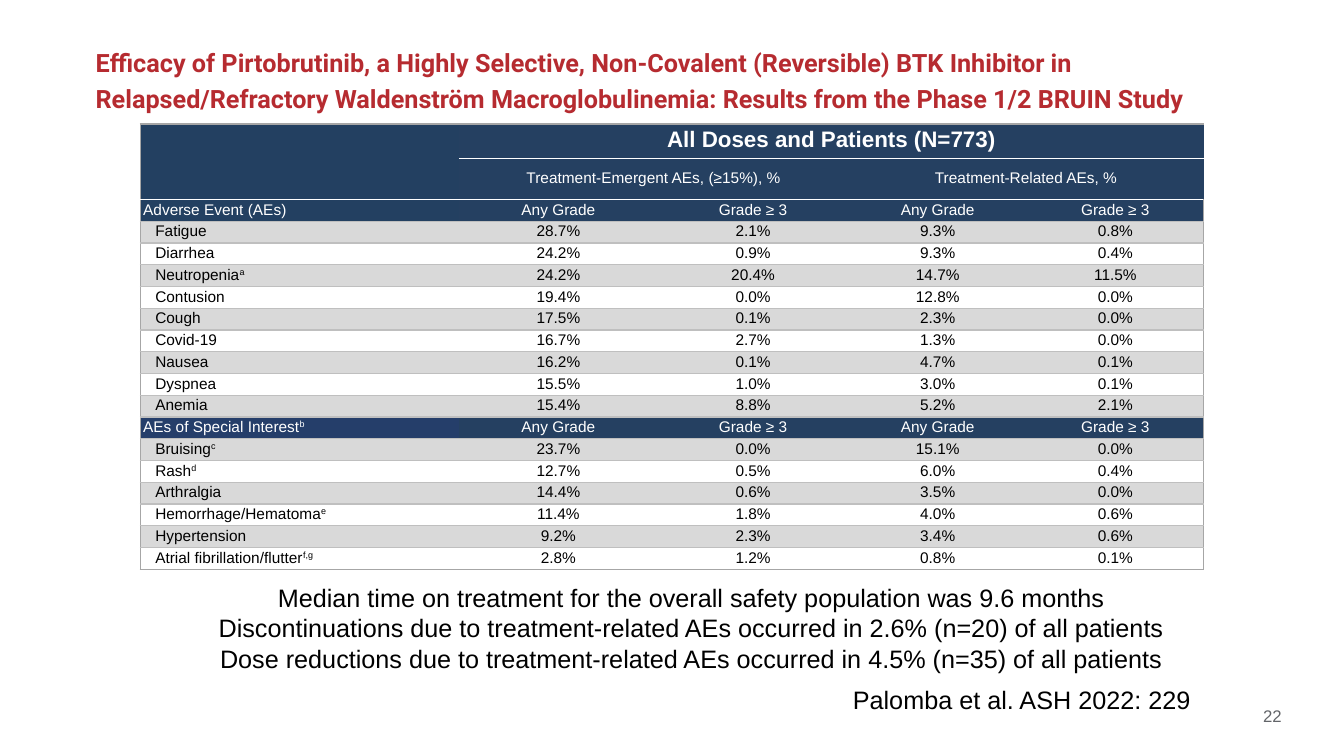
"""Build the slide on adverse events in the pirtobrutinib study."""
import dataclasses
import typing

import pptx
import pptx.dml.color
import pptx.enum.text
import pptx.oxml
import pptx.oxml.ns
import pptx.util

Color = pptx.dml.color.RGBColor
Align = pptx.enum.text.PP_ALIGN

WHITE = Color(0xFF, 0xFF, 0xFF)
BLACK = Color(0x00, 0x00, 0x00)
RED = Color(0xB6, 0x2B, 0x30)
GREY_TEXT = Color(0x63, 0x65, 0x69)
NAVY = Color(0x25, 0x40, 0x61)
NAVY_LABEL = Color(0x23, 0x40, 0x61)
NAVY_SPECIAL = Color(0x25, 0x3E, 0x6A)
BAND = Color(0xD9, 0xD9, 0xD9)
FRAME = Color(0xA6, 0xA6, 0xA6)
RULE = Color(0xBF, 0xBF, 0xBF)

SLIDE_WIDTH = pptx.util.Inches(13.33)
SLIDE_HEIGHT = pptx.util.Inches(7.5)
PLAIN_TABLE_STYLE = "{2D5ABB26-0587-4C30-8999-92F81FD0307C}"
COLUMN_PERCENTS = (29.98, 18.69, 17.92, 16.8, 16.61)
HEADER_PERCENTS = (7.69, 9.28)
GRADES = ("Any Grade", "Grade ≥ 3") * 2


@dataclasses.dataclass(frozen=True)
class Area:
    """A place on the slide in percent of the slide's size."""

    left: float
    top: float
    width: float
    height: float

    def lengths(self) -> tuple[int, int, int, int]:
        """Return left, top, width and height as slide lengths."""
        return (int(SLIDE_WIDTH * self.left / 100), int(SLIDE_HEIGHT * self.top / 100),
                int(SLIDE_WIDTH * self.width / 100), int(SLIDE_HEIGHT * self.height / 100))


@dataclasses.dataclass(frozen=True)
class TextBlock:
    """A text box with one style for all its lines."""

    area: Area
    lines: tuple[str, ...]
    size: float = 18
    color: Color = BLACK
    font: str = "Arial"
    bold: bool = False
    align: Align = Align.LEFT
    spacing: float = 1.0
    indent: float = 0
    wrap: bool = True


@dataclasses.dataclass(frozen=True)
class EventRow:
    """A table row: label, footnote mark, values and colours."""

    label: str
    values: tuple[str, ...]
    mark: str = ""
    label_fill: typing.Optional[Color] = None


TABLE_AREA = Area(10.43, 16.4, 79.14, 58.93)
PAGE_NUMBER = TextBlock(Area(75.47, 92.67, 20.63, 4), ("22",), size=12,
                        color=GREY_TEXT, align=Align.RIGHT)
TEXT_BLOCKS = (
    TextBlock(Area(10.43, 76.4, 79.14, 13.47), (
        "Median time on treatment for the overall safety population was 9.6 months",
        "Discontinuations due to treatment-related AEs occurred in 2.6% (n=20) of all patients",
        "Dose reductions due to treatment-related AEs occurred in 4.5% (n=35) of all patients",
    ), align=Align.CENTER, indent=0.38),
    TextBlock(Area(62.72, 89.87, 26.86, 5.33), ("Palomba et al. ASH 2022: 229",), wrap=False),
    TextBlock(Area(6.38, 4.8, 87.25, 33.87), (
        "Efficacy of Pirtobrutinib, a Highly Selective, Non-Covalent (Reversible) BTK Inhibitor "
        "in Relapsed/Refractory Waldenström Macroglobulinemia: Results from the Phase 1/2 "
        "BRUIN Study",), color=RED, font="Roboto", bold=True, spacing=1.2),
)
EVENT_ROWS = (
    EventRow("Adverse Event (AEs)", GRADES, label_fill=NAVY_LABEL),
    EventRow("Fatigue", ("28.7%", "2.1%", "9.3%", "0.8%")),
    EventRow("Diarrhea", ("24.2%", "0.9%", "9.3%", "0.4%")),
    EventRow("Neutropenia", ("24.2%", "20.4%", "14.7%", "11.5%"), "a"),
    EventRow("Contusion", ("19.4%", "0.0%", "12.8%", "0.0%")),
    EventRow("Cough", ("17.5%", "0.1%", "2.3%", "0.0%")),
    EventRow("Covid-19", ("16.7%", "2.7%", "1.3%", "0.0%")),
    EventRow("Nausea", ("16.2%", "0.1%", "4.7%", "0.1%")),
    EventRow("Dyspnea", ("15.5%", "1.0%", "3.0%", "0.1%")),
    EventRow("Anemia", ("15.4%", "8.8%", "5.2%", "2.1%")),
    EventRow("AEs of Special Interest", GRADES, "b", NAVY_SPECIAL),
    EventRow("Bruising", ("23.7%", "0.0%", "15.1%", "0.0%"), "c"),
    EventRow("Rash", ("12.7%", "0.5%", "6.0%", "0.4%"), "d"),
    EventRow("Arthralgia", ("14.4%", "0.6%", "3.5%", "0.0%")),
    EventRow("Hemorrhage/Hematoma", ("11.4%", "1.8%", "4.0%", "0.6%"), "e"),
    EventRow("Hypertension", ("9.2%", "2.3%", "3.4%", "0.6%")),
    EventRow("Atrial fibrillation/flutter", ("2.8%", "1.2%", "0.8%", "0.1%"), "f,g"),
)


def style_run(run, size: float, color: Color, font: str = "Arial", bold: bool = False) -> None:
    """Set the font of a run."""
    run.font.size = pptx.util.Pt(size)
    run.font.color.rgb = color
    run.font.name = font
    run.font.bold = bold


def set_indent(paragraph, inches: float) -> None:
    """Set the left margin of a paragraph."""
    properties = paragraph._p.get_or_add_pPr()
    properties.set("marL", str(pptx.util.Inches(inches)))
    properties.set("indent", "0")


def add_text(slide, block: TextBlock) -> None:
    """Draw a text block."""
    text_frame = slide.shapes.add_textbox(*block.area.lengths()).text_frame
    text_frame.word_wrap = block.wrap
    text_frame.text = "\n".join(block.lines)
    for paragraph in text_frame.paragraphs:
        set_indent(paragraph, block.indent)
        paragraph.alignment = block.align
        paragraph.line_spacing = block.spacing
        style_run(paragraph.runs[0], block.size, block.color, block.font, block.bold)


def add_border(cell, side: str, color: Color) -> None:
    """Draw a one-point line on the L, R, T or B side of a cell."""
    cell._tc.get_or_add_tcPr().append(pptx.oxml.parse_xml(
        f'<a:ln{side} {pptx.oxml.ns.nsdecls("a")} w="12700"><a:solidFill>'
        f'<a:srgbClr val="{color}"/></a:solidFill></a:ln{side}>'))


def write_cell(cell, text: str, color: Color, size: float = 11, bold: bool = False,
               align: Align = Align.CENTER, mark: str = "", indent: float = 0) -> None:
    """Write a label or value with an optional raised mark."""
    paragraph = cell.text_frame.paragraphs[0]
    paragraph.text = text
    set_indent(paragraph, indent)
    paragraph.alignment = align
    paragraph.line_spacing = 0.9
    if mark:
        raised = paragraph.add_run()
        raised.text = mark
        raised._r.get_or_add_rPr().set("baseline", "30000")
    for run in paragraph.runs:
        style_run(run, size, color, bold=bold)


def line_color(boundary: int, column: int, row_count: int) -> typing.Optional[Color]:
    """Return the colour of the line above the row with this number."""
    if boundary in (0, row_count):
        return FRAME
    if boundary == 1:
        return WHITE if column else None
    return WHITE if boundary == 2 else RULE


def format_cell(cell, row: int, column: int, row_count: int, fill: Color) -> None:
    """Set margins, borders and fill of a cell."""
    cell.margin_left = cell.margin_right = pptx.util.Inches(0.03)
    cell.margin_top = cell.margin_bottom = pptx.util.Inches(0.02)
    cell.vertical_anchor = pptx.enum.text.MSO_ANCHOR.MIDDLE
    borders = {"L": FRAME if column == 0 else None,
               "R": FRAME if column == len(COLUMN_PERCENTS) - 1 else None,
               "T": line_color(row, column, row_count),
               "B": line_color(row + 1, column, row_count)}
    for side, color in borders.items():
        if color is not None:
            add_border(cell, side, color)
    cell.fill.solid()
    cell.fill.fore_color.rgb = fill


def add_event_table(slide) -> None:
    """Draw the table of adverse events."""
    header_count = len(HEADER_PERCENTS)
    row_count = header_count + len(EVENT_ROWS)
    frame = slide.shapes.add_table(row_count, len(COLUMN_PERCENTS), *TABLE_AREA.lengths())
    table, width, height = frame.table, frame.width, frame.height
    table.first_row = table.horz_banding = False
    table._tbl.tblPr.find(pptx.oxml.ns.qn("a:tableStyleId")).text = PLAIN_TABLE_STYLE
    for column, percent in zip(table.columns, COLUMN_PERCENTS):
        column.width = int(width * percent / 100)
    event_percent = (100 - sum(HEADER_PERCENTS)) / len(EVENT_ROWS)
    for row, percent in zip(table.rows, HEADER_PERCENTS + (event_percent,) * len(EVENT_ROWS)):
        row.height = int(height * percent / 100)

    for row in range(header_count):
        for column in range(len(COLUMN_PERCENTS)):
            format_cell(table.cell(row, column), row, column, row_count,
                        NAVY if column else NAVY_LABEL)
    for row, first, last, text, size in (
            (0, 1, 4, "All Doses and Patients (N=773)", 16),
            (1, 1, 2, "Treatment-Emergent AEs, (≥15%), %", 11),
            (1, 3, 4, "Treatment-Related AEs, %", 11)):
        table.cell(row, first).merge(table.cell(row, last))
        write_cell(table.cell(row, first), text, WHITE, size, bold=row == 0)

    banded = False
    for row, event in enumerate(EVENT_ROWS, header_count):
        heading = event.label_fill is not None
        banded = not heading and not banded
        fill = NAVY if heading else BAND if banded else WHITE
        color = WHITE if heading else BLACK
        for column, text in enumerate((event.label, *event.values)):
            cell = table.cell(row, column)
            format_cell(cell, row, column, row_count,
                        event.label_fill if heading and column == 0 else fill)
            if column:
                write_cell(cell, text, color)
            else:
                write_cell(cell, text, color, align=Align.LEFT, mark=event.mark,
                           indent=0 if heading else 0.12)


def main() -> None:
    """Build and save the presentation."""
    presentation = pptx.Presentation()
    presentation.slide_width, presentation.slide_height = SLIDE_WIDTH, SLIDE_HEIGHT
    slide = presentation.slides.add_slide(presentation.slide_layouts[6])
    add_text(slide, PAGE_NUMBER)
    add_event_table(slide)
    for block in TEXT_BLOCKS:
        add_text(slide, block)
    presentation.save("out.pptx")


if __name__ == "__main__":
    main()
